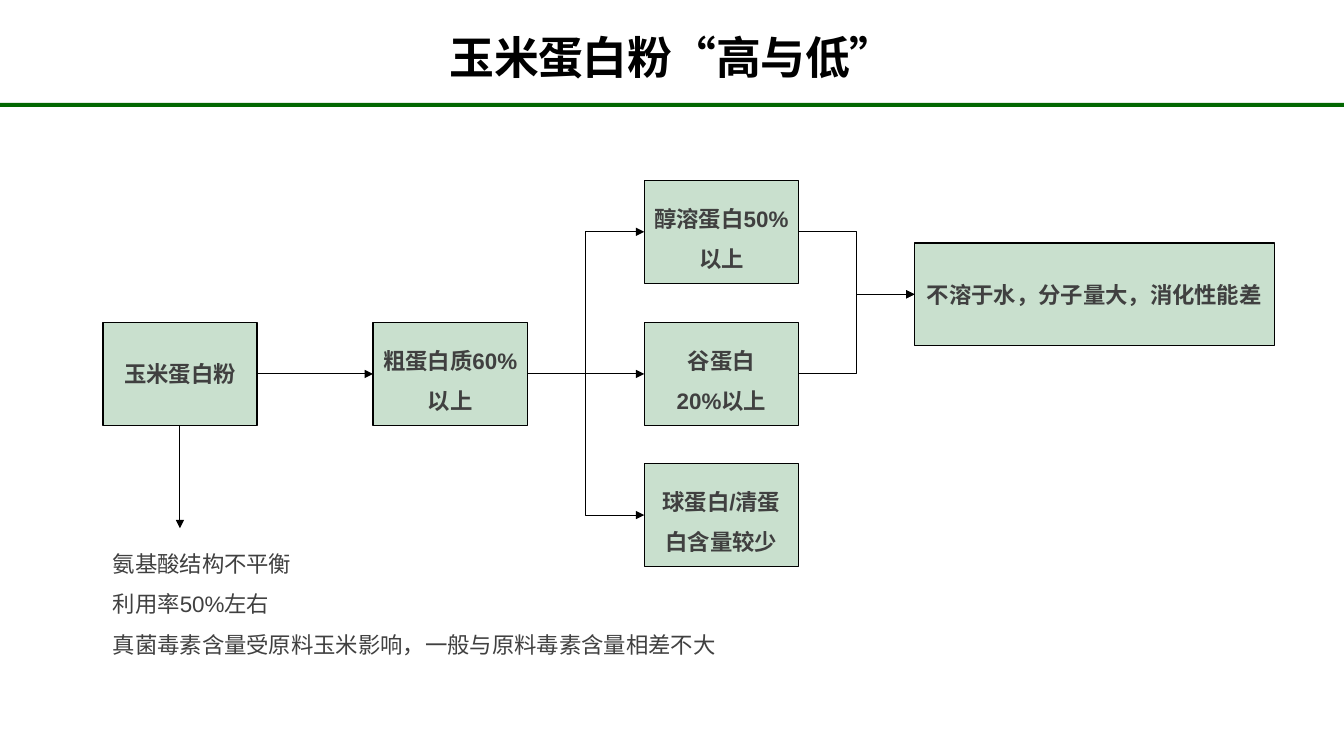
from lxml import etree
from pptx import Presentation
from pptx.dml.color import RGBColor
from pptx.enum.shapes import MSO_CONNECTOR, MSO_SHAPE
from pptx.enum.text import MSO_ANCHOR, MSO_AUTO_SIZE, PP_ALIGN
from pptx.oxml.ns import qn
from pptx.util import Inches, Pt

RECT = MSO_SHAPE.RECTANGLE
STRAIGHT, ELBOW = MSO_CONNECTOR.STRAIGHT, MSO_CONNECTOR.ELBOW
MIDDLE, NO_FIT = MSO_ANCHOR.MIDDLE, MSO_AUTO_SIZE.NONE
LEFT, CENTER = PP_ALIGN.LEFT, PP_ALIGN.CENTER
LEFT_SITE, BOTTOM_SITE, RIGHT_SITE = 1, 2, 3
CJK = "Noto Sans CJK SC"
BLACK, GRAY, GREEN, MINT = "000000", "404040", "026701", "C9E0CE"
BOX_W, BOX_H = 1.53, 1.02
COL_1, COL_2, COL_3, COL_4 = 1.02, 3.7, 6.39, 9.07
ROW_1, ROW_2, ROW_3 = 1.79, 3.2, 4.6


def rgb(value):
    """Return the colour for a hex string."""
    return RGBColor.from_string(value)


def write(tf, text, size=16, font="Arial", color=GRAY, bold=False,
          align=LEFT, spacing=1.0, tracking=None):
    """Fill a text frame, one paragraph per line of text."""
    tf.word_wrap = True
    tf.auto_size = NO_FIT
    tf.vertical_anchor = MIDDLE
    for i, line in enumerate(text.split("\n")):
        p = tf.paragraphs[0] if i == 0 else tf.add_paragraph()
        p.alignment = align
        p.line_spacing = spacing
        r = p.add_run()
        r.text = line
        r.font.size = Pt(size)
        r.font.name = font
        r.font.bold = bold
        r.font.color.rgb = rgb(color)
        rPr = r.font._element
        etree.SubElement(rPr, qn("a:ea")).set("typeface", CJK)
        if tracking is not None:
            rPr.set("spc", str(tracking))


def add_title(s, text):
    """Place the slide title and the green rule below it."""
    sp = s.shapes.title
    sp.left, sp.top = Inches(1.98), Inches(0.34)
    sp.width, sp.height = Inches(9.37), Inches(0.51)
    tf = sp.text_frame
    tf.margin_left = tf.margin_right = tf.margin_top = tf.margin_bottom = 0
    write(tf, text, size=32, font=CJK, color=BLACK, bold=True,
          align=CENTER, spacing=0.91, tracking=-30)
    rule = s.shapes.add_shape(RECT, 0, Inches(1.02), Inches(13.33), Inches(0.04))
    rule.shadow.inherit = False
    rule.fill.solid()
    rule.fill.fore_color.rgb = rgb(GREEN)
    rule.line.fill.background()


def add_box(s, x, y, text, width=BOX_W, spacing=1.5):
    """Add a bordered box of the flow chart."""
    sp = s.shapes.add_shape(RECT, Inches(x), Inches(y), Inches(width), Inches(BOX_H))
    sp.shadow.inherit = False
    sp.fill.solid()
    sp.fill.fore_color.rgb = rgb(MINT)
    sp.line.color.rgb = rgb(BLACK)
    sp.line.width = Pt(1)
    write(sp.text_frame, text, bold=True, align=CENTER, spacing=spacing)
    return sp


def add_arrow(s, kind, x1=0, y1=0, x2=0, y2=0):
    """Add a thin black connector with an arrowhead at its end."""
    c = s.shapes.add_connector(kind, Inches(x1), Inches(y1), Inches(x2), Inches(y2))
    c.line.color.rgb = rgb(BLACK)
    c.line.width = Pt(0.75)
    etree.SubElement(c.line._get_or_add_ln(), qn("a:tailEnd")).set("type", "triangle")
    etree.SubElement(c._element.spPr, qn("a:effectLst"))
    return c


def link(s, source, target):
    """Join the right side of one box to the left side of another."""
    c = add_arrow(s, STRAIGHT if source.top == target.top else ELBOW)
    c.begin_connect(source, RIGHT_SITE)
    c.end_connect(target, LEFT_SITE)


def add_notes_below(s, source, text):
    """Add the plain remarks and the arrow leading down to them."""
    sp = s.shapes.add_textbox(Inches(COL_1), Inches(4.91), Inches(6.3), Inches(2.03))
    write(sp.text_frame, text, spacing=1.5)
    x, y = COL_1 + BOX_W / 2, ROW_2 + BOX_H
    c = add_arrow(s, STRAIGHT, x, y, x, y + 1.02)
    c.begin_connect(source, BOTTOM_SITE)


def main():
    """Build the slide and save it."""
    prs = Presentation()
    prs.slide_width, prs.slide_height = Inches(13.33), Inches(7.5)
    s = prs.slides.add_slide(prs.slide_layouts[5])
    add_title(s, "玉米蛋白粉“高与低”")

    meal = add_box(s, COL_1, ROW_2, "玉米蛋白粉", spacing=1.0)
    crude = add_box(s, COL_2, ROW_2, "粗蛋白质60%以上")
    zein = add_box(s, COL_3, ROW_1, "醇溶蛋白50%以上")
    glutelin = add_box(s, COL_3, ROW_2, "谷蛋白\n20%以上")
    globulin = add_box(s, COL_3, ROW_3, "球蛋白/清蛋白含量较少")
    result = add_box(s, COL_4, 2.41, "不溶于水，分子量大，消化性能差",
                     width=3.57, spacing=1.0)

    link(s, meal, crude)
    for protein in (zein, glutelin, globulin):
        link(s, crude, protein)
    for protein in (zein, glutelin):
        link(s, protein, result)

    add_notes_below(s, meal, "氨基酸结构不平衡\n利用率50%左右\n"
                    "真菌毒素含量受原料玉米影响，一般与原料毒素含量相差不大")
    prs.save("out.pptx")


if __name__ == "__main__":
    main()
